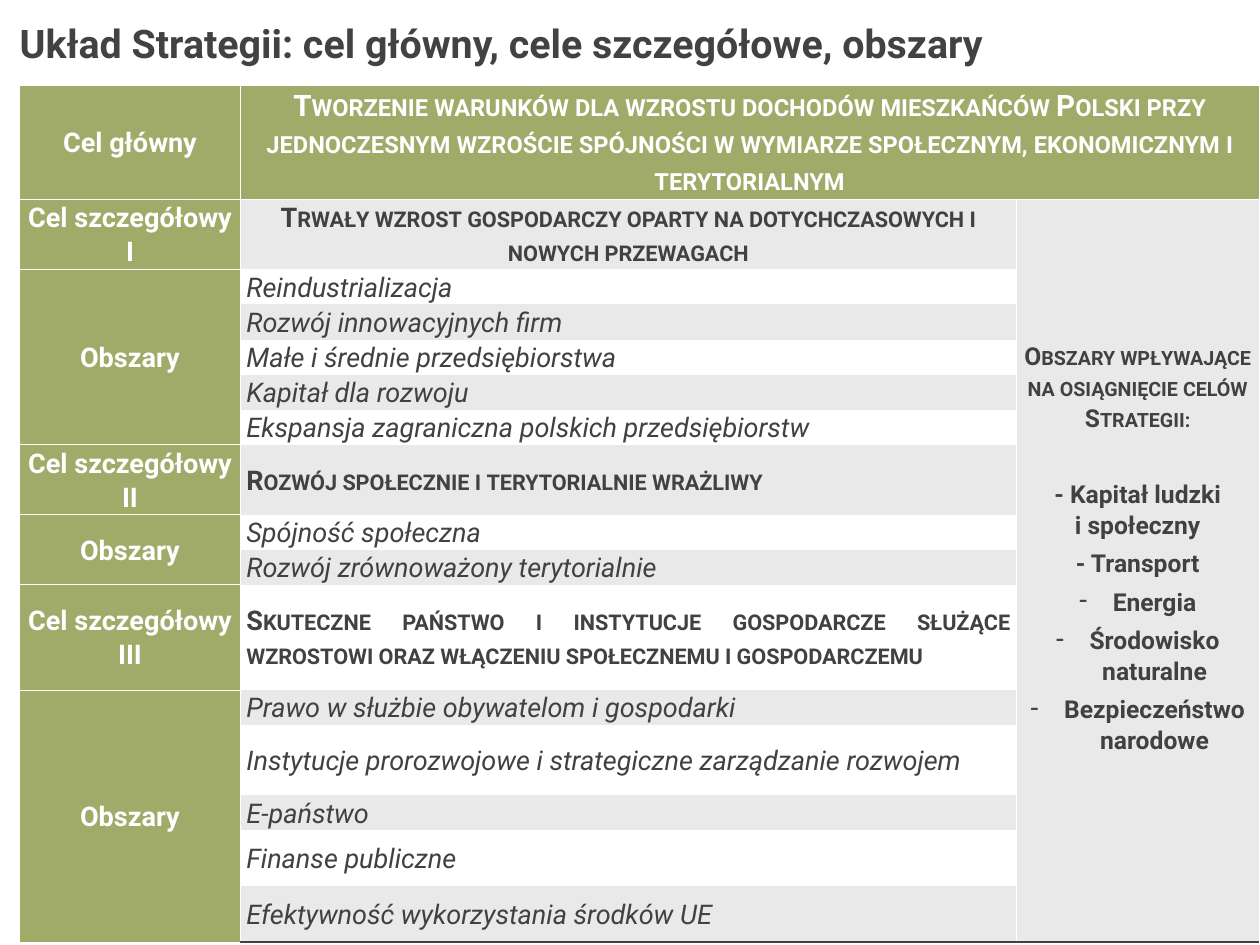
from dataclasses import dataclass

import pptx
import pptx.dml.color
import pptx.enum.text
import pptx.oxml
import pptx.oxml.ns
import pptx.table
import pptx.text.text
import pptx.util

Pt = pptx.util.Pt
ALIGN = pptx.enum.text.PP_ALIGN
MIDDLE = pptx.enum.text.MSO_ANCHOR.MIDDLE
TOP = pptx.enum.text.MSO_ANCHOR.TOP
NO_TABLE_STYLE = "{2D5ABB26-0587-4C30-8999-92F81FD0307C}"


@dataclass(frozen=True)
class Theme:
    font: str = "Roboto"
    title: str = "414241"
    text: str = "414141"
    white: str = "FFFFFF"
    green: str = "A0AA69"
    grey: str = "E9E9E9"
    title_size: float = 32
    main_goal_size: float = 24
    body_size: float = 22
    sidebar_size: float = 20
    line_spacing: float = 1.07


@dataclass(frozen=True)
class TextStyle:
    size: float
    color: str
    bold: bool = True
    italic: bool = False
    small_caps: bool = False
    align: ALIGN = ALIGN.CENTER


@dataclass(frozen=True)
class Area:
    name: str
    height: float = 28.5


@dataclass(frozen=True)
class Goal:
    label: str
    text: str
    height: float
    style: TextStyle
    areas: tuple[Area, ...]


@dataclass(frozen=True)
class SidebarItem:
    text: str
    small_caps: bool = False
    bullet: bool = False
    space_before: float = 0


THEME = Theme()
LABEL = TextStyle(THEME.body_size, THEME.white)
MAIN_GOAL = TextStyle(THEME.main_goal_size, THEME.white, small_caps=True)
CENTRED_GOAL = TextStyle(THEME.body_size, THEME.text, small_caps=True)
GOAL = TextStyle(THEME.body_size, THEME.text, small_caps=True, align=ALIGN.JUSTIFY)
AREA = TextStyle(THEME.body_size, THEME.text, bold=False, italic=True, align=ALIGN.JUSTIFY)
TITLE = TextStyle(THEME.title_size, THEME.title, align=ALIGN.LEFT)

COLUMN_WIDTHS = (179.3, 630.7, 197.3)
MAIN_GOAL_HEIGHT = 85.5
MAIN_GOAL_TEXT = (
    "Tworzenie warunków dla wzrostu dochodów mieszkańców Polski przy jednoczesnym "
    "wzroście spójności w wymiarze społecznym, ekonomicznym i terytorialnym"
)
GOALS = (
    Goal("Cel szczegółowy I",
         "Trwały wzrost gospodarczy oparty na dotychczasowych i nowych przewagach",
         57, CENTRED_GOAL,
         (Area("Reindustrializacja"), Area("Rozwój innowacyjnych firm"),
          Area("Małe i średnie przedsiębiorstwa"), Area("Kapitał dla rozwoju"),
          Area("Ekspansja zagraniczna polskich przedsiębiorstw"))),
    Goal("Cel szczegółowy II", "Rozwój społecznie i terytorialnie wrażliwy", 57, GOAL,
         (Area("Spójność społeczna"), Area("Rozwój zrównoważony terytorialnie"))),
    Goal("Cel szczegółowy III",
         "Skuteczne państwo i instytucje gospodarcze służące wzrostowi "
         "oraz włączeniu społecznemu i gospodarczemu",
         85.5, GOAL,
         (Area("Prawo w służbie obywatelom i gospodarki"),
          Area("Instytucje prorozwojowe i strategiczne zarządzanie rozwojem", 57),
          Area("E-państwo"), Area("Finanse publiczne", 45.5),
          Area("Efektywność wykorzystania środków UE", 45.5))),
)
SIDEBAR = (
    SidebarItem("Obszary wpływające na osiągnięcie celów Strategii:", small_caps=True),
    SidebarItem("- Kapitał ludzki\vi społeczny", space_before=31),
    SidebarItem("- Transport"),
    SidebarItem("Energia", bullet=True),
    SidebarItem("Środowisko naturalne", bullet=True),
    SidebarItem("Bezpieczeństwo narodowe", bullet=True),
)


def set_values(target: object, values: dict[str, object]) -> None:
    for name, value in values.items():
        setattr(target, name, value)


def write_paragraph(paragraph: pptx.text.text._Paragraph, text: str, style: TextStyle,
                    line_spacing: float = THEME.line_spacing) -> None:
    set_values(paragraph, {"text": text, "alignment": style.align, "line_spacing": line_spacing})
    for run in paragraph.runs:
        set_values(run.font, {"name": THEME.font, "size": Pt(style.size),
                              "bold": style.bold, "italic": style.italic})
        run.font.color.rgb = pptx.dml.color.RGBColor.from_string(style.color)
        if style.small_caps:
            run.font._element.set("cap", "small")


def add_bullet(paragraph: pptx.text.text._Paragraph) -> None:
    properties = paragraph._p.get_or_add_pPr()
    properties.set("marL", str(Pt(27.4)))
    properties.set("indent", str(-Pt(27.4)))
    bullet = pptx.oxml.parse_xml(f'<a:buChar {pptx.oxml.ns.nsdecls("a")} char="-"/>')
    properties.append(bullet)


def set_borders(cell: pptx.table._Cell, borders: dict[str, tuple[str, float]]) -> None:
    """Draw the given sides, keyed L, R, T, B in that order, as (colour, width)."""
    properties = cell._tc.get_or_add_tcPr()
    for side, (color, width) in borders.items():
        properties.append(pptx.oxml.parse_xml(
            f'<a:ln{side} {pptx.oxml.ns.nsdecls("a")} w="{Pt(width)}">'
            f'<a:solidFill><a:srgbClr val="{color}"/></a:solidFill></a:ln{side}>'))


def format_cell(cell: pptx.table._Cell, fill: str, borders: dict[str, tuple[str, float]]) -> None:
    set_borders(cell, borders)
    cell.fill.solid()
    cell.fill.fore_color.rgb = pptx.dml.color.RGBColor.from_string(fill)


def fill_green_cell(cell: pptx.table._Cell, text: str, style: TextStyle) -> None:
    format_cell(cell, THEME.green, {side: (THEME.white, 1) for side in "LRTB"})
    write_paragraph(cell.text_frame.paragraphs[0], text, style)


def fill_body_cell(table: pptx.table.Table, row: int, text: str, style: TextStyle) -> None:
    borders = {"L": (THEME.white, 1)}
    if row == 1:
        borders["T"] = (THEME.white, 1)
    if row == len(table.rows) - 1:
        borders["B"] = (THEME.text, 2)
    cell = table.cell(row, 1)
    format_cell(cell, THEME.grey if row % 2 else THEME.white, borders)
    write_paragraph(cell.text_frame.paragraphs[0], text, style)


def fill_sidebar(cell: pptx.table._Cell) -> None:
    format_cell(cell, THEME.grey, {"L": (THEME.white, 1), "T": (THEME.white, 1), "B": (THEME.text, 2)})
    set_values(cell, {"vertical_anchor": TOP, "margin_top": Pt(114.5)})
    for index, item in enumerate(SIDEBAR):
        frame = cell.text_frame
        paragraph = frame.add_paragraph() if index else frame.paragraphs[0]
        style = TextStyle(THEME.sidebar_size, THEME.text, small_caps=item.small_caps)
        write_paragraph(paragraph, item.text, style)
        paragraph.space_after = Pt(6)
        if item.space_before:
            paragraph.space_before = Pt(item.space_before)
        if item.bullet:
            add_bullet(paragraph)


def add_strategy_table(slide: pptx.slide.Slide) -> None:
    heights = [MAIN_GOAL_HEIGHT]
    for goal in GOALS:
        heights += [goal.height, *(area.height for area in goal.areas)]
    table = slide.shapes.add_table(len(heights), len(COLUMN_WIDTHS), Pt(16), Pt(69.5),
                                   Pt(sum(COLUMN_WIDTHS)), Pt(sum(heights))).table
    set_values(table, {"first_row": False, "horz_banding": False})
    table._tbl.tblPr.find(pptx.oxml.ns.qn("a:tableStyleId")).text = NO_TABLE_STYLE
    for column, width in zip(table.columns, COLUMN_WIDTHS):
        column.width = Pt(width)
    for row, height in zip(table.rows, heights):
        row.height = Pt(height)
    for cell in table.iter_cells():
        set_values(cell, {"margin_left": Pt(5), "margin_right": Pt(5), "margin_top": 0,
                          "margin_bottom": 0, "vertical_anchor": MIDDLE})

    table.cell(0, 1).merge(table.cell(0, 2))
    table.cell(1, 2).merge(table.cell(len(heights) - 1, 2))
    fill_green_cell(table.cell(0, 0), "Cel główny", LABEL)
    fill_green_cell(table.cell(0, 1), MAIN_GOAL_TEXT, MAIN_GOAL)
    fill_sidebar(table.cell(1, 2))
    row = 1
    for goal in GOALS:
        fill_green_cell(table.cell(row, 0), goal.label, LABEL)
        fill_body_cell(table, row, goal.text, goal.style)
        last_row = row + len(goal.areas)
        table.cell(row + 1, 0).merge(table.cell(last_row, 0))
        fill_green_cell(table.cell(row + 1, 0), "Obszary", LABEL)
        for area_row, area in enumerate(goal.areas, row + 1):
            fill_body_cell(table, area_row, area.name, AREA)
        row = last_row + 1


def add_title(slide: pptx.slide.Slide) -> None:
    frame = slide.shapes.add_textbox(Pt(16), Pt(10), Pt(1007), Pt(54)).text_frame
    set_values(frame, {"word_wrap": True, "vertical_anchor": MIDDLE, "margin_left": 0,
                       "margin_right": 0, "margin_top": 0, "margin_bottom": 0})
    write_paragraph(frame.paragraphs[0],
                    "Układ Strategii: cel główny, cele szczegółowe, obszary", TITLE, 0.9)


def main() -> None:
    presentation = pptx.Presentation()
    set_values(presentation, {"slide_width": Pt(1024), "slide_height": Pt(768)})
    slide = presentation.slides.add_slide(presentation.slide_layouts[6])
    add_title(slide)
    add_strategy_table(slide)
    presentation.save("out.pptx")


if __name__ == "__main__":
    main()
